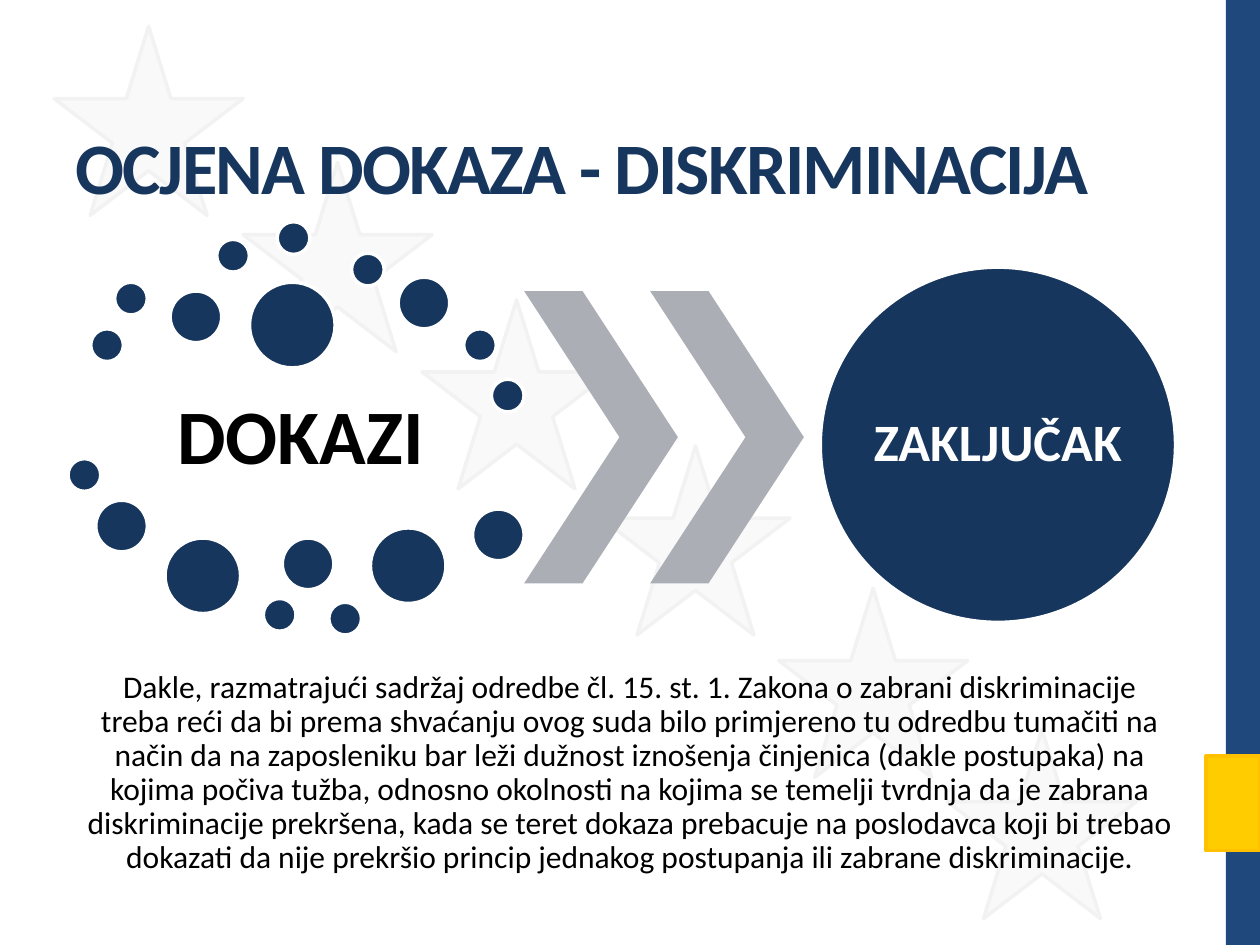
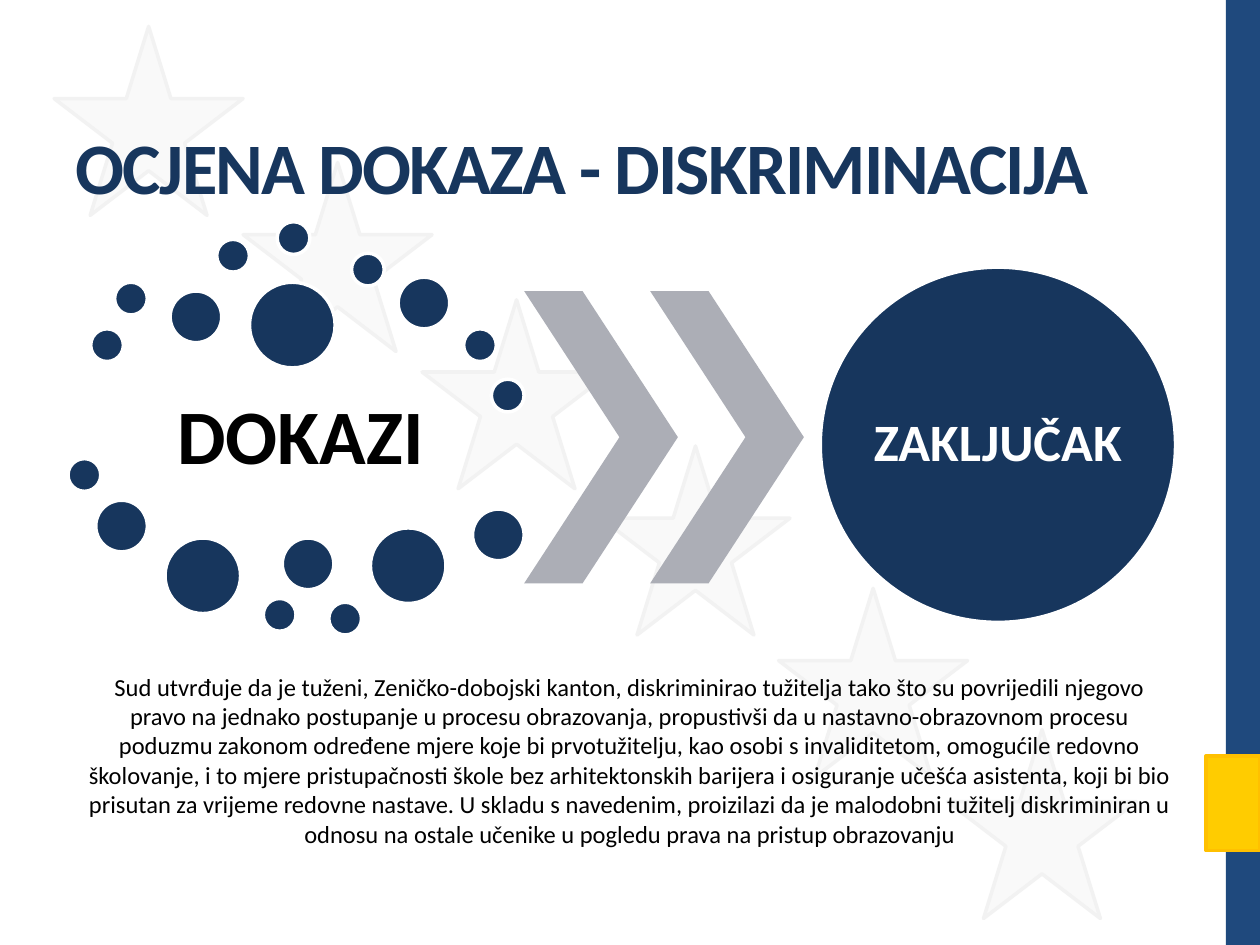
import pptx
import pptx.util
import pptx.dml.color
import pptx.enum.shapes
import pptx.enum.text
from dataclasses import dataclass

SHAPE = pptx.enum.shapes.MSO_SHAPE
ALIGN = pptx.enum.text.PP_ALIGN
ANCHOR = pptx.enum.text.MSO_ANCHOR

# Content
TITLE = "OCJENA DOKAZA - DISKRIMINACIJA"
EVIDENCE = "DOKAZI"
CONCLUSION = "ZAKLJUČAK"
SLIDES = [
    {"text": "Dakle, razmatrajući sadržaj odredbe čl. 15. st. 1. Zakona o zabrani "
             "diskriminacije treba reći da bi prema shvaćanju ovog suda bilo primjereno tu "
             "odredbu tumačiti na način da na zaposleniku bar leži dužnost iznošenja činjenica "
             "(dakle postupaka) na kojima počiva tužba, odnosno okolnosti na kojima se temelji "
             "tvrdnja da je zabrana diskriminacije prekršena, kada se teret dokaza prebacuje na "
             "poslodavca koji bi trebao dokazati da nije prekršio princip jednakog postupanja "
             "ili zabrane diskriminacije.",
     "size": 18, "spacing": 0.9},
    {"text": "Sud utvrđuje da je tuženi, Zeničko-dobojski kanton, diskriminirao tužitelja tako "
             "što su povrijedili njegovo pravo na jednako postupanje u procesu obrazovanja, "
             "propustivši da u nastavno-obrazovnom procesu poduzmu zakonom određene mjere koje "
             "bi prvotužitelju, kao osobi s invaliditetom, omogućile redovno školovanje, i to "
             "mjere pristupačnosti škole bez arhitektonskih barijera i osiguranje učešća "
             "asistenta, koji bi bio prisutan za vrijeme redovne nastave. U skladu s navedenim, "
             "proizilazi da je malodobni tužitelj diskriminiran u odnosu na ostale učenike u "
             "pogledu prava na pristup obrazovanju",
     "size": 14, "spacing": 1.0},
]


@dataclass(frozen=True)
class Theme:
    font: str = "Calibri"
    navy: str = "17365D"
    band: str = "1F497D"
    gold: str = "FFCC00"
    gold_edge: str = "FFC000"
    star: str = "F9F9F9"
    star_edge: str = "F2F2F2"
    arrow: str = "ACAEB6"
    white: str = "FFFFFF"
    black: str = "000000"
    title_size: float = 41.4
    evidence_size: float = 44
    conclusion_size: float = 30
    edge: float = 2


THEME = Theme()

# Grid: 100 columns by 75 rows of square cells
COLUMNS, ROWS = 100, 75
CELL = pptx.util.Inches(0.1)

STAR_SIZE = 15
STARS = [(4.3, 2.1), (19.3, 12.9), (33.5, 23.8), (47.7, 35.4), (61.8, 46.7), (75.2, 57.9)]

# Evidence dots: diameter -> left column and top row of each
DOTS = {
    2.6: [(7.2, 26.1), (9.1, 22.4), (17.2, 19), (22, 17.6), (27.9, 20.1), (36.8, 26.1),
          (39, 30.1), (5.4, 36.4), (20.9, 47.5), (26.1, 47.8)],
    4.1: [(13.5, 23.1), (31.6, 22), (7.6, 39.7), (22.4, 42.7), (37.5, 40.4)],
    6: [(13.1, 42.7), (29.4, 41.9)],
    6.8: [(19.8, 22.4)],
}
ARROW_LEFT, ARROW_STEP, ARROW_COUNT = 41.6, 10, 2


def cells(*lengths):
    return [round(length * CELL) for length in lengths]


def colour(value):
    return pptx.dml.color.RGBColor.from_string(value)


def add_figure(page, kind, place, fill, edge=None):
    shape = page.shapes.add_shape(kind, *cells(*place))
    shape.shadow.inherit = False
    shape.fill.solid()
    shape.fill.fore_color.rgb = colour(fill)
    if edge:
        shape.line.color.rgb = colour(edge)
        shape.line.width = pptx.util.Pt(THEME.edge)
    else:
        shape.line.fill.background()
    return shape


def write(box, text, size, ink, bold=True, align=ALIGN.CENTER, spacing=0.9,
          inset=(0, 0), anchor=ANCHOR.MIDDLE):
    frame = box.text_frame
    frame.text = text
    frame.word_wrap = True
    frame.vertical_anchor = anchor
    frame.margin_left = frame.margin_right = cells(inset[0])[0]
    frame.margin_top = frame.margin_bottom = cells(inset[1])[0]
    para = frame.paragraphs[0]
    para.alignment = align
    para.line_spacing = spacing
    span = para.runs[0]
    span.font.name = THEME.font
    span.font.size = pptx.util.Pt(size)
    span.font.bold = bold
    span.font.color.rgb = colour(ink)
    return span


def add_text(page, place, *args, **options):
    return write(page.shapes.add_textbox(*cells(*place)), *args, **options)


def add_frame(page):
    """Background stars, side band and title."""
    for left, top in STARS:
        add_figure(page, SHAPE.STAR_5_POINT, (left, top, STAR_SIZE, STAR_SIZE),
                   THEME.star, THEME.star_edge)
    band, tab = 2.7, 4.3
    add_figure(page, SHAPE.RECTANGLE, (COLUMNS - band, 0, band, ROWS), THEME.band)
    add_figure(page, SHAPE.RECTANGLE, (COLUMNS - tab, 60, tab, 7.5),
               THEME.gold, THEME.gold_edge)
    span = add_text(page, (5, 6.9, 90, 12.5), TITLE, THEME.title_size, THEME.navy,
                    align=ALIGN.LEFT, spacing=1.0, inset=(1, 0.5))
    span.font._element.set("spc", "-100")


def add_diagram(page):
    """Scattered evidence leading to one conclusion."""
    add_text(page, (7.3, 29.4, 33.1, 10.9), EVIDENCE, THEME.evidence_size, THEME.black,
             inset=(0.6, 0.6))
    for size, spots in DOTS.items():
        for left, top in spots:
            add_figure(page, SHAPE.OVAL, (left, top, size, size), THEME.navy, THEME.white)
    for index in range(ARROW_COUNT):
        left = ARROW_LEFT + index * ARROW_STEP
        arrow = add_figure(page, SHAPE.CHEVRON, (left, 23.1, 12.2, 23.2), THEME.arrow)
        arrow.adjustments[0] = 0.62
    circle = add_figure(page, SHAPE.OVAL, (65.1, 21.2, 28.2, 28.2), THEME.navy, THEME.white)
    write(circle, CONCLUSION, THEME.conclusion_size, THEME.white)


def main():
    deck = pptx.Presentation()
    deck.slide_width, deck.slide_height = cells(COLUMNS, ROWS)
    blank = deck.slide_layouts[6]
    for content in SLIDES:
        page = deck.slides.add_slide(blank)
        add_frame(page)
        add_diagram(page)
        add_text(page, (6.7, 53.2, 86.6, 14.3), content["text"], content["size"],
                 THEME.black, bold=False, spacing=content["spacing"],
                 inset=(0.1, 0.1), anchor=ANCHOR.TOP)
    deck.save("out.pptx")


if __name__ == "__main__":
    main()
